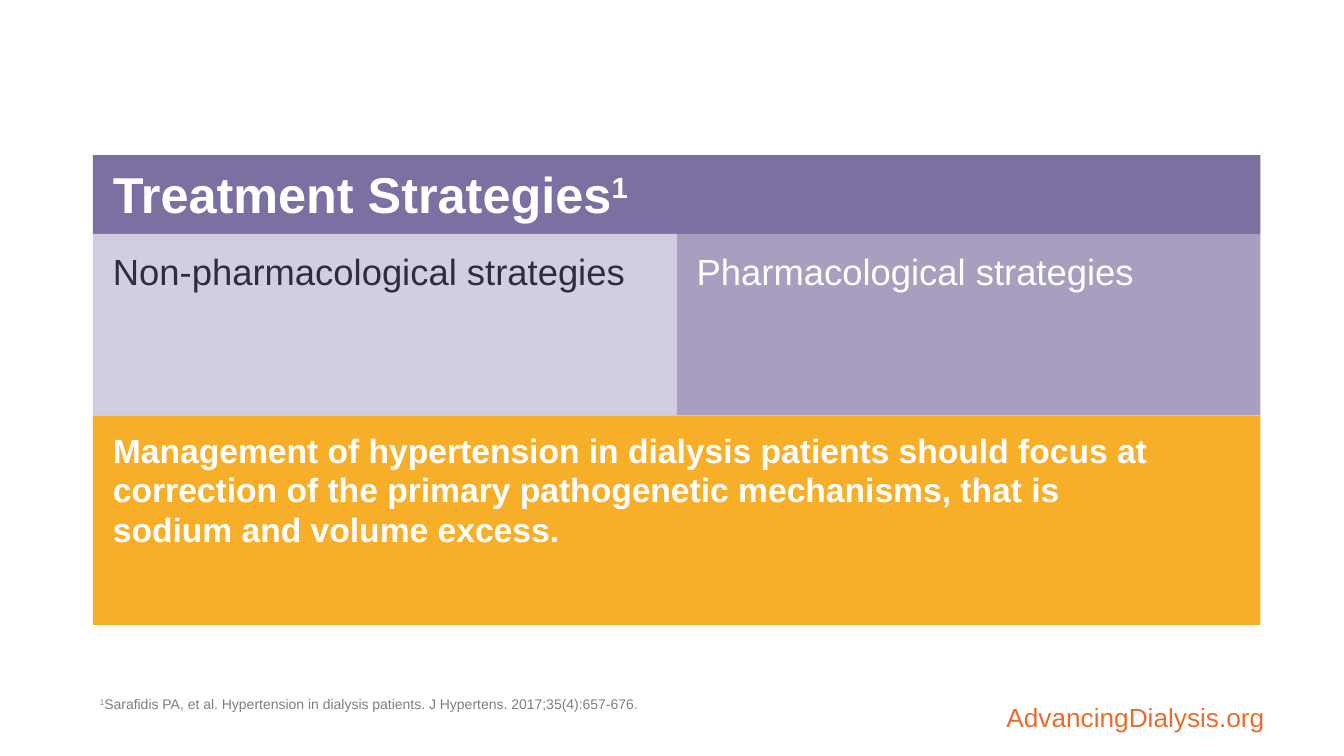
from pptx import Presentation
from pptx.dml.color import RGBColor
from pptx.enum.shapes import MSO_SHAPE
from pptx.enum.text import MSO_ANCHOR, PP_ALIGN
from pptx.util import Pt

PX = 9144
RECTANGLE = MSO_SHAPE.RECTANGLE
TOP, MIDDLE, BOTTOM = MSO_ANCHOR.TOP, MSO_ANCHOR.MIDDLE, MSO_ANCHOR.BOTTOM
LEFT, RIGHT = PP_ALIGN.LEFT, PP_ALIGN.RIGHT

COLORS = {
    "purple": "7C6FA1",
    "lilac": "D3CEDF",
    "mauve": "A79EC0",
    "amber": "F7AE28",
    "white": "FFFFFF",
    "ink": "312B42",
    "grey": "7F7F7F",
    "orange": "ED6B2A",
}


def write(holder, pieces, size, color, insets, anchor=TOP, align=LEFT, bold=False):
    frame = holder.text_frame
    frame.word_wrap = True
    frame.vertical_anchor = anchor
    frame.margin_left, frame.margin_top, frame.margin_right, frame.margin_bottom = [
        inset * PX for inset in insets
    ]
    paragraph = frame.paragraphs[0]
    paragraph.alignment = align
    paragraph.font.name = "Arial"
    paragraph.font.size = Pt(size)
    paragraph.font.bold = bold
    paragraph.font.color.rgb = RGBColor.from_string(COLORS[color])
    for text, raised in pieces:
        run = paragraph.add_run()
        run.text = text
        if raised:
            run._r.get_or_add_rPr().set("baseline", "30000")
    return paragraph


def add_panel(left, top, width, height, fill):
    panel = slide.shapes.add_shape(RECTANGLE, left * PX, top * PX, width * PX, height * PX)
    panel.shadow.inherit = False
    panel.fill.solid()
    panel.fill.fore_color.rgb = RGBColor.from_string(COLORS[fill])
    panel.line.fill.background()
    return panel


deck = Presentation()
deck.slide_width = 1333 * PX
deck.slide_height = 750 * PX
slide = deck.slides.add_slide(deck.slide_layouts[6])

website = slide.shapes.add_textbox(812 * PX, 666 * PX, 453 * PX, 61 * PX)
address = write(website, [("AdvancingDialysis.org", False)], 18.7, "orange",
                (11, 0, 11, 0), BOTTOM, RIGHT)
address.line_spacing = 0.9

board_left, board_width = 92, 1158
half = board_width // 2

heading = add_panel(board_left, 154, board_width, 78, "purple")
write(heading, [("Treatment Strategies", False), ("1", True)], 36, "white",
      (20, 4, 7, 10), BOTTOM, bold=True)

strategies = [
    ("Non-pharmacological strategies", "lilac", "ink"),
    ("Pharmacological strategies", "mauve", "white"),
]
for column, (strategy, fill, color) in enumerate(strategies):
    strategy_panel = add_panel(board_left + column * half, 232, half, 180, fill)
    label = write(strategy_panel, [(strategy, False)], 26, color, (20, 20, 10, 5))
    label.line_spacing = Pt(28)
    label.space_after = Pt(18)

conclusion = add_panel(board_left, 412, board_width, 208, "amber")
message = write(
    conclusion,
    [("Management of hypertension in dialysis patients should focus at correction of "
      "the primary pathogenetic mechanisms, that is sodium and volume excess.", False)],
    24, "white", (20, 20, 90, 80), MIDDLE, bold=True)
message.line_spacing = Pt(28)
message.space_after = Pt(18)

reference = slide.shapes.add_textbox(board_left * PX, 688 * PX, 831 * PX, 31 * PX)
citation = write(
    reference,
    [("1", True),
     ("Sarafidis PA, et al. Hypertension in dialysis patients. "
      "J Hypertens. 2017;35(4):657-676.", False)],
    10, "grey", (7, 4, 7, 4))
citation.line_spacing = 0.9

deck.save("out.pptx")
